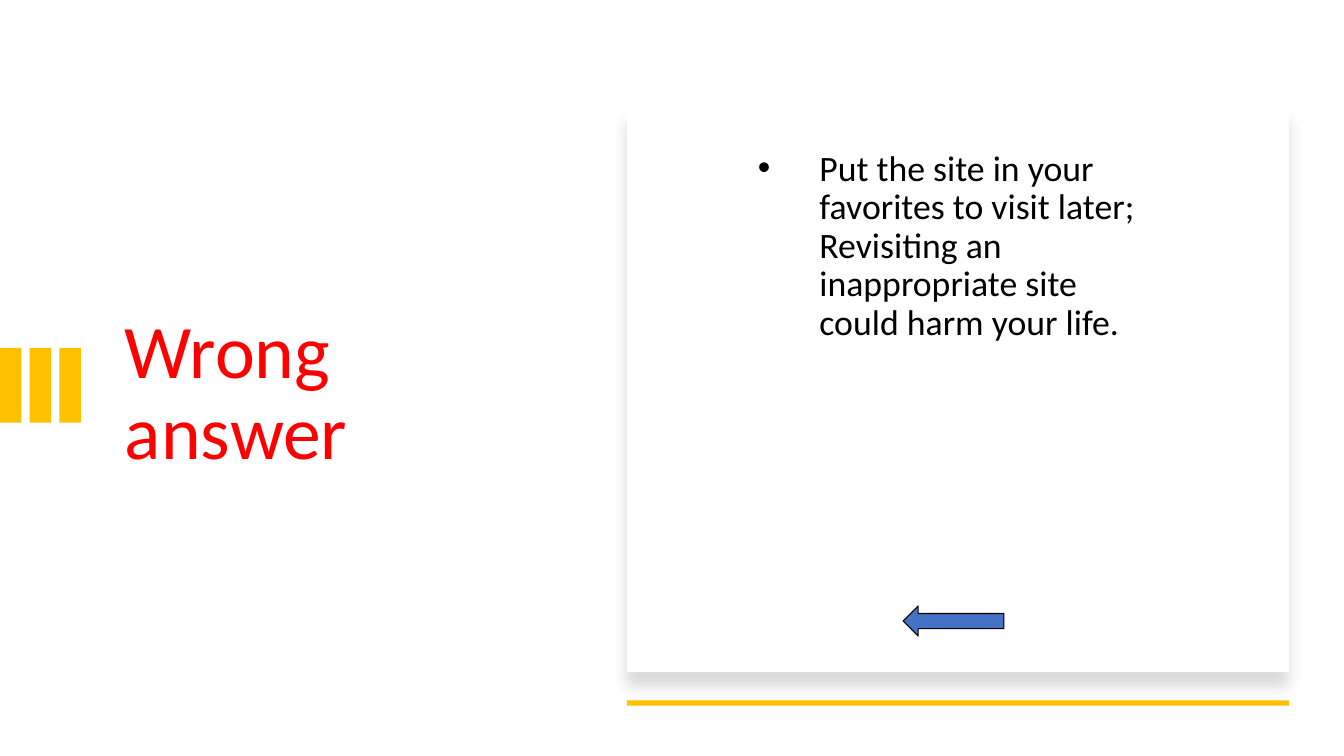
"""Build a quiz feedback slide for a wrong answer."""
from lxml import etree
from pptx import Presentation
from pptx.dml.color import RGBColor
from pptx.enum.shapes import MSO_SHAPE
from pptx.enum.text import MSO_ANCHOR
from pptx.oxml.ns import qn
from pptx.util import Cm, Pt

RECT = MSO_SHAPE.RECTANGLE
LEFT_ARROW = MSO_SHAPE.LEFT_ARROW
TOP, MIDDLE = MSO_ANCHOR.TOP, MSO_ANCHOR.MIDDLE
FONT = "Calibri"
COLORS = {"white": "FFFFFF", "black": "000000", "gold": "FFC000",
          "blue": "4472C4", "red": "FF0000"}


def rgb(name):
    return RGBColor.from_string(COLORS[name])


def add_block(shapes, kind, x, y, w, h, fill):
    sp = shapes.add_shape(kind, Cm(x), Cm(y), Cm(w), Cm(h))
    sp.shadow.inherit = False
    sp.fill.solid()
    sp.fill.fore_color.rgb = rgb(fill)
    sp.line.fill.background()
    return sp


def add_shadow(sp):
    effects = sp._element.spPr.find(qn("a:effectLst"))
    shadow = etree.SubElement(effects, qn("a:outerShdw"), blurRad=str(Pt(11)),
                              dist=str(Pt(10)), dir="5400000", algn="t",
                              rotWithShape="0")
    color = etree.SubElement(shadow, qn("a:srgbClr"), val=COLORS["black"])
    etree.SubElement(color, qn("a:alpha"), val="15000")


def add_text(s, x, y, w, h, text, size, color, anchor):
    tf = s.shapes.add_textbox(Cm(x), Cm(y), Cm(w), Cm(h)).text_frame
    tf.word_wrap = True
    tf.vertical_anchor = anchor
    p = tf.paragraphs[0]
    p.text = text
    p.line_spacing = 0.9
    font = p.runs[0].font
    font.name, font.size, font.color.rgb = FONT, Pt(size), rgb(color)
    return p


def add_bullet(p, indent):
    pPr = p._p.get_or_add_pPr()
    pPr.set("marL", str(Cm(indent)))
    pPr.set("indent", str(-Cm(indent)))
    etree.SubElement(pPr, qn("a:buFont"), typeface="Arial")
    etree.SubElement(pPr, qn("a:buChar"), char="•")


def add_bars(s, x, y, h):
    bars = s.shapes.add_group_shape()
    for i in range(3):
        add_block(bars.shapes, RECT, x + i * 0.75, y, 0.54, h, "gold")


def add_answer_card(s, x, y, w, h):
    add_shadow(add_block(s.shapes, RECT, x, y, w, h, "white"))
    add_block(s.shapes, RECT, x, y + h + 0.71, w, 0.13, "gold")
    p = add_text(s, x + 3.05, y + 0.94, 10.57, 11.05,
                 "Put the site in your favorites to visit later; "
                 "Revisiting an inappropriate site could harm your life.",
                 25.5, "black", TOP)
    p.space_before = Pt(9.1)
    add_bullet(p, 1.55)
    arrow = add_block(s.shapes, LEFT_ARROW, x + 6.96, y + 12.55, 2.54, 0.76, "blue")
    arrow.line.color.rgb = rgb("black")
    arrow.line.width = Pt(0.75)


def main():
    prs = Presentation()
    prs.slide_width, prs.slide_height = Cm(33.87), Cm(19.05)
    s = prs.slides.add_slide(prs.slide_layouts[6])
    add_text(s, 2.9, 4.11, 10.82, 11.66, "Wrong answer", 54, "red", MIDDLE)
    add_bars(s, 0, 8.77, 1.88)
    add_answer_card(s, 15.8, 2.72, 16.69, 14.22)
    prs.save("out.pptx")


if __name__ == "__main__":
    main()
